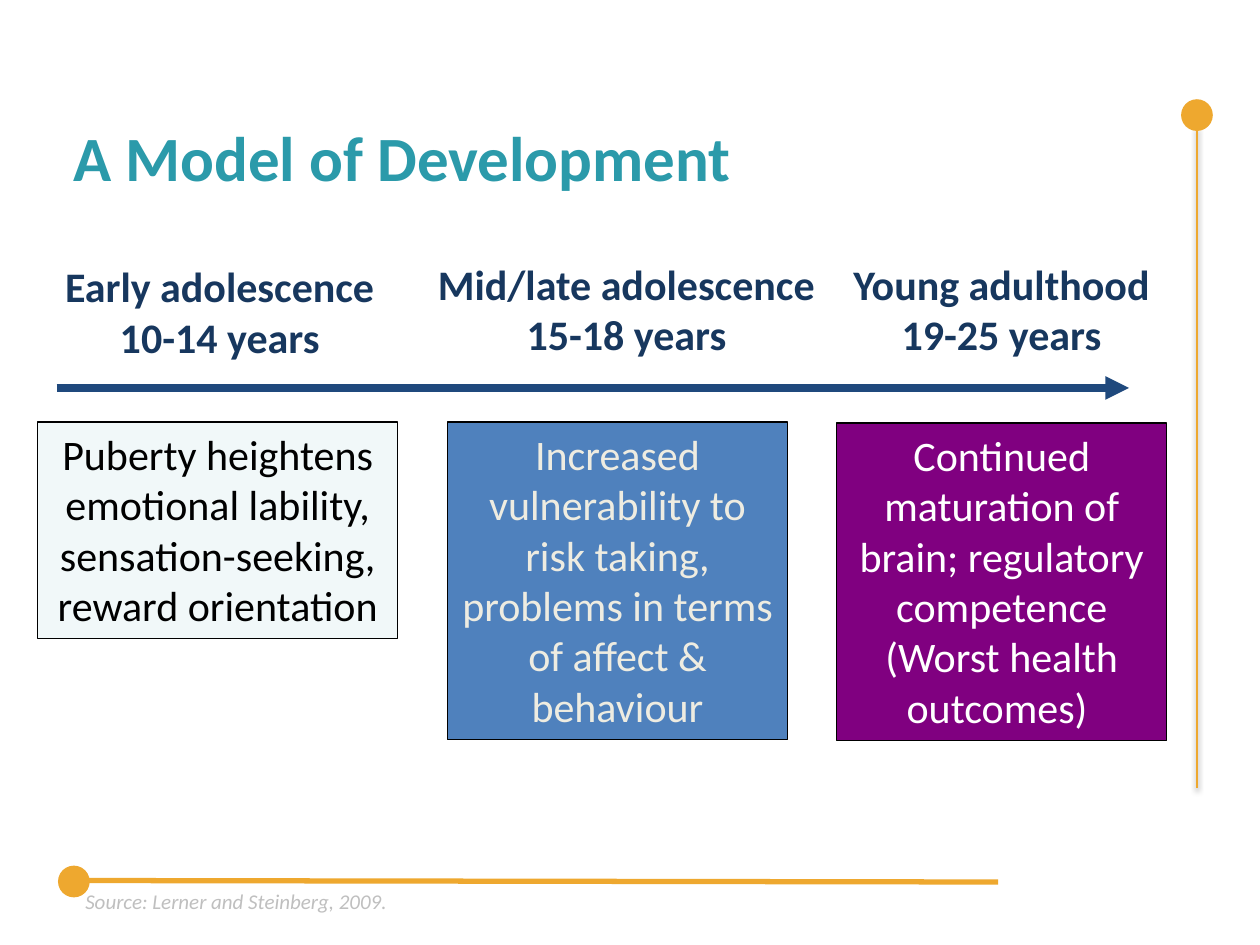
import pptx
import pptx.dml.color
import pptx.enum.shapes
import pptx.enum.text
import pptx.oxml
import pptx.oxml.ns
import pptx.util
from pptx.dml.color import RGBColor
from pptx.enum.shapes import MSO_CONNECTOR, MSO_SHAPE
from pptx.enum.text import MSO_ANCHOR, MSO_AUTO_SIZE, PP_ALIGN
from pptx.util import Cm, Pt

AMBER = RGBColor(0xEE, 0xA8, 0x2F)
TEAL = RGBColor(0x2B, 0x9A, 0xAA)
NAVY = RGBColor(0x17, 0x37, 0x5E)
ARROW_BLUE = RGBColor(0x1F, 0x49, 0x7D)
BLACK = RGBColor(0, 0, 0)
WHITE = RGBColor(0xFF, 0xFF, 0xFF)
CREAM = RGBColor(0xEE, 0xEC, 0xE1)
GREY = RGBColor(0xBF, 0xBF, 0xBF)
ICE = RGBColor(0xF1, 0xF8, 0xF9)
BLUE = RGBColor(0x4F, 0x81, 0xBD)
PURPLE = RGBColor(0x80, 0, 0x80)

TITLE = "A Model of Development"
SOURCE = "Source: Lerner and Steinberg, 2009."

# Positions are left, top, width, height in centimetres.
STAGES = [
    {"heading": ["Early adolescence", "10-14 years"],
     "heading_at": (0.91, 5.13, 7.04, 2.31),
     "traits": ["Puberty heightens emotional lability, sensation-seeking, "
                "reward orientation"],
     "traits_at": (0.76, 8.51, 7.26, 4.37), "fill": ICE, "ink": BLACK},
    {"heading": ["Mid/late adolescence", "15-18 years"],
     "heading_at": (8.53, 5.08, 8.2, 2.31),
     "traits": ["Increased vulnerability to risk taking, problems in terms "
                "of affect & behaviour"],
     "traits_at": (9.02, 8.51, 6.86, 6.4), "fill": BLUE, "ink": CREAM},
    {"heading": ["Young adulthood", "19-25 years"],
     "heading_at": (16.81, 5.08, 6.76, 2.31),
     "traits": ["Continued maturation of brain; regulatory competence",
                "(Worst health outcomes) "],
     "traits_at": (16.87, 8.53, 6.65, 6.4), "fill": PURPLE, "ink": WHITE},
]
# Each rule: start and end points, line width, centre of its dot.
RULES = [
    {"ends": (24.13, 15.88, 24.13, 2.57), "width": 1.5, "dot": (24.13, 2.32),
     "shadow": True},
    {"ends": (1.7, 17.75, 20.12, 17.78), "width": 3, "dot": (1.49, 17.77),
     "shadow": False},
]
DOT_SIZE = 0.64
TIMELINE = (1.14, 7.82, 22.76, 7.82)

SHADOW = ('<a:outerShdw blurRad="39370" dist="20320" dir="5400000" rotWithShape="0">'
          '<a:srgbClr val="000000"><a:alpha val="38000"/></a:srgbClr></a:outerShdw>')


def drawing_element(tag, content=""):
    namespace = pptx.oxml.ns.nsdecls("a")
    return pptx.oxml.parse_xml(f"<a:{tag} {namespace}>{content}</a:{tag}>")


def add_line(page, ends, width, colour, effect=""):
    line = page.shapes.add_connector(MSO_CONNECTOR.STRAIGHT, *map(Cm, ends))
    line.line.color.rgb = colour
    line.line.width = Pt(width)
    line._element.spPr.append(drawing_element("effectLst", effect))
    return line


def write(box, lines, align, **font_format):
    frame = box.text_frame
    frame.text = "\n".join(lines)
    for para in frame.paragraphs:
        para.alignment = align
        for name, value in {"name": "Calibri", **font_format}.items():
            if name == "color":
                para.font.color.rgb = value
            else:
                setattr(para.font, name, value)


def set_frame(box, wrap):
    frame_format = {"word_wrap": wrap, "vertical_anchor": MSO_ANCHOR.TOP,
                    "auto_size": MSO_AUTO_SIZE.SHAPE_TO_FIT_TEXT}
    for name, value in frame_format.items():
        setattr(box.text_frame, name, value)


def add_rule(page, rule):
    """Draw an amber line that ends in a dot."""
    add_line(page, rule["ends"], rule["width"], AMBER, SHADOW if rule["shadow"] else "")
    left, top = (centre - DOT_SIZE / 2 for centre in rule["dot"])
    dot = page.shapes.add_shape(MSO_SHAPE.OVAL, *map(Cm, (left, top, DOT_SIZE, DOT_SIZE)))
    dot.rotation = 330
    dot.shadow.inherit = False
    dot.fill.solid()
    dot.fill.fore_color.rgb = AMBER
    dot.line.fill.background()


def add_traits(page, stage):
    box = page.shapes.add_shape(MSO_SHAPE.RECTANGLE, *map(Cm, stage["traits_at"]))
    box.shadow.inherit = False
    box.fill.solid()
    box.fill.fore_color.rgb = stage["fill"]
    box.line.color.rgb = BLACK
    box.line.width = Pt(0.75)
    write(box, stage["traits"], PP_ALIGN.CENTER, size=Pt(24), color=stage["ink"])
    set_frame(box, wrap=True)


def add_text(page, position, lines, align, wrap, **font_format):
    box = page.shapes.add_textbox(*map(Cm, position))
    write(box, lines, align, **font_format)
    set_frame(box, wrap)


def main():
    deck = pptx.Presentation()
    deck.slide_width, deck.slide_height = Cm(25.4), Cm(19.05)
    page = deck.slides.add_slide(deck.slide_layouts[5])

    for rule in RULES:
        add_rule(page, rule)

    title = page.shapes.title
    title.left, title.top, title.width, title.height = map(Cm, (1.22, 1.57, 22.86, 3.18))
    title.text_frame.vertical_anchor = MSO_ANCHOR.MIDDLE
    write(title, [TITLE], PP_ALIGN.LEFT, size=Pt(36), bold=True, color=TEAL)

    for stage in STAGES:
        add_traits(page, stage)
    timeline = add_line(page, TIMELINE, 4.5, ARROW_BLUE)
    timeline.line._get_or_add_ln().append(drawing_element("tailEnd"))
    timeline.line._get_or_add_ln()[-1].set("type", "triangle")
    for stage in STAGES:
        add_text(page, stage["heading_at"], stage["heading"], PP_ALIGN.CENTER, False,
                 size=Pt(24), bold=True, color=NAVY)

    add_text(page, (1.47, 17.78, 9.35, 0.76), [SOURCE], PP_ALIGN.LEFT, True,
             size=Pt(12), italic=True, color=GREY)
    deck.save("out.pptx")


if __name__ == "__main__":
    main()
